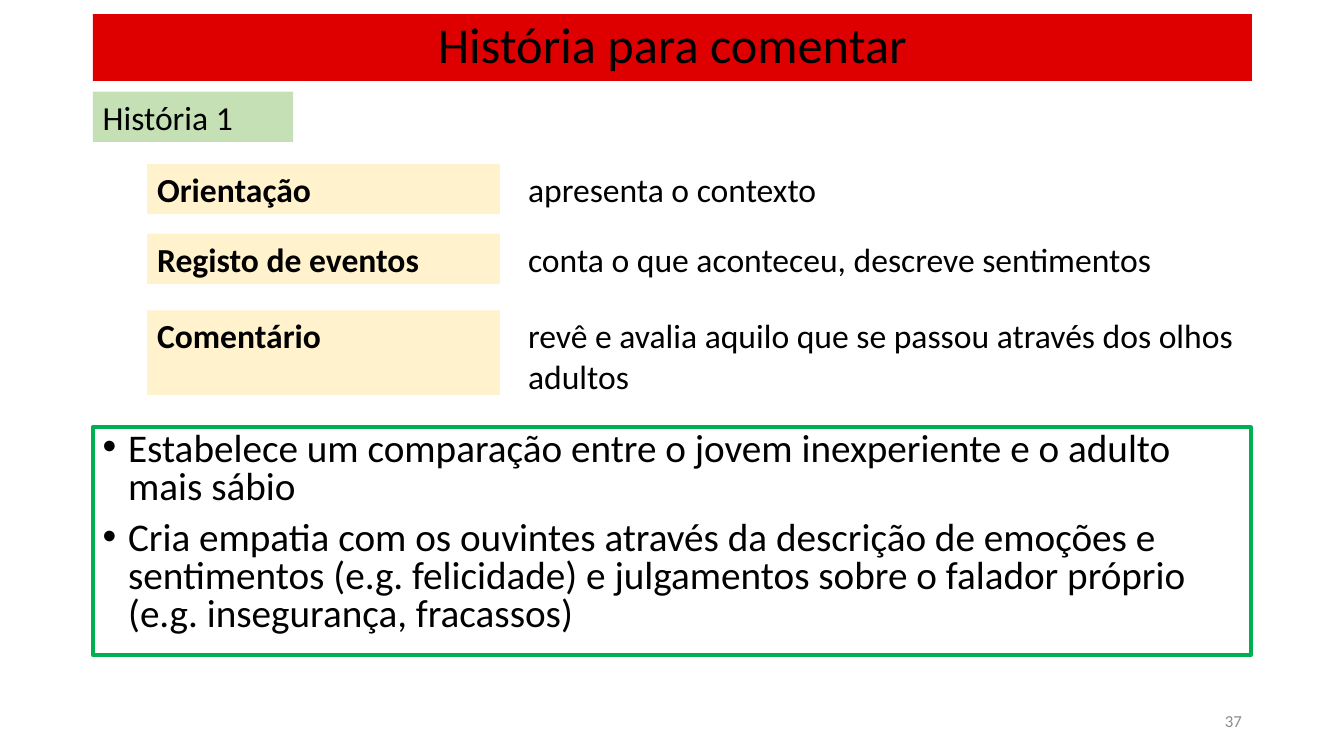
"""Build the slide "História para comentar"."""
from lxml.etree import SubElement
from pptx import Presentation
from pptx.dml.color import RGBColor
from pptx.enum.text import MSO_ANCHOR, PP_ALIGN
from pptx.oxml.ns import qn
from pptx.util import Cm, Pt

BLACK = RGBColor(0x00, 0x00, 0x00)
RED = RGBColor(0xDE, 0x00, 0x00)
CREAM = RGBColor(0xFF, 0xF2, 0xCC)
MINT = RGBColor(0xC5, 0xE0, 0xB4)
GREEN = RGBColor(0x00, 0xB0, 0x50)
GRAY = RGBColor(0x8C, 0x8C, 0x8C)

deck = Presentation()
deck.slide_width, deck.slide_height = Cm(33.87), Cm(19.05)
slide = deck.slides.add_slide(deck.slide_layouts[6])


def add_box(place, lines, size=24, fill=None, anchor=MSO_ANCHOR.TOP,
            color=BLACK, bold=False, **style):
    box = slide.shapes.add_textbox(*[Cm(n) for n in place])
    if fill is not None:
        box.fill.solid()
        box.fill.fore_color.rgb = fill
    frame = box.text_frame
    frame.word_wrap = True
    frame.vertical_anchor = anchor
    frame.text = "\n".join(lines)
    for para in frame.paragraphs:
        for name, value in style.items():
            setattr(para, name, value)
        font = para.runs[0].font
        looks = {"name": "Calibri", "size": Pt(size), "bold": bold}
        for name, value in looks.items():
            setattr(font, name, value)
        font.color.rgb = color
    return box


LEFT = 2.34
add_box((LEFT, 0.36, 29.21, 1.68), ["História para comentar"], 36, RED,
        MSO_ANCHOR.MIDDLE, alignment=PP_ALIGN.CENTER, line_spacing=0.9)
add_box((LEFT, 2.31, 5.05, 1.27), ["História 1"], fill=MINT)

stages = [
    (4.13, 1.27, "Orientação", "apresenta o contexto"),
    (5.89, 1.27, "Registo de eventos",
     "conta o que aconteceu, descreve sentimentos"),
    (7.82, 2.13, "Comentário",
     "revê e avalia aquilo que se passou através dos olhos adultos"),
]
for top, height, stage, role in stages:
    add_box((3.71, top, 8.89, height), [stage], fill=CREAM, bold=True)
    add_box((13.06, top, 18.47, height), [role])

points = [
    "Estabelece um comparação entre o jovem inexperiente e o adulto mais sábio",
    "Cria empatia com os ouvintes através da descrição de emoções e "
    "sentimentos (e.g. felicidade) e julgamentos sobre o falador próprio "
    "(e.g. insegurança, fracassos)",
]
notes = add_box((LEFT, 10.77, 29.18, 5.74), points, 28,
                line_spacing=0.8, space_before=Pt(10))
notes.line.color.rgb = GREEN
notes.line.width = Pt(3)
for para in notes.text_frame.paragraphs:
    props = para._p.get_or_add_pPr()
    props.set("marL", str(Cm(0.64)))
    props.set("indent", str(-Cm(0.64)))
    SubElement(props, qn("a:buFont"), typeface="Arial")
    SubElement(props, qn("a:buChar"), char="•")

add_box((23.93, 17.65, 7.62, 1.02), ["37"], 12, anchor=MSO_ANCHOR.MIDDLE,
        color=GRAY, alignment=PP_ALIGN.RIGHT)

deck.save("out.pptx")
